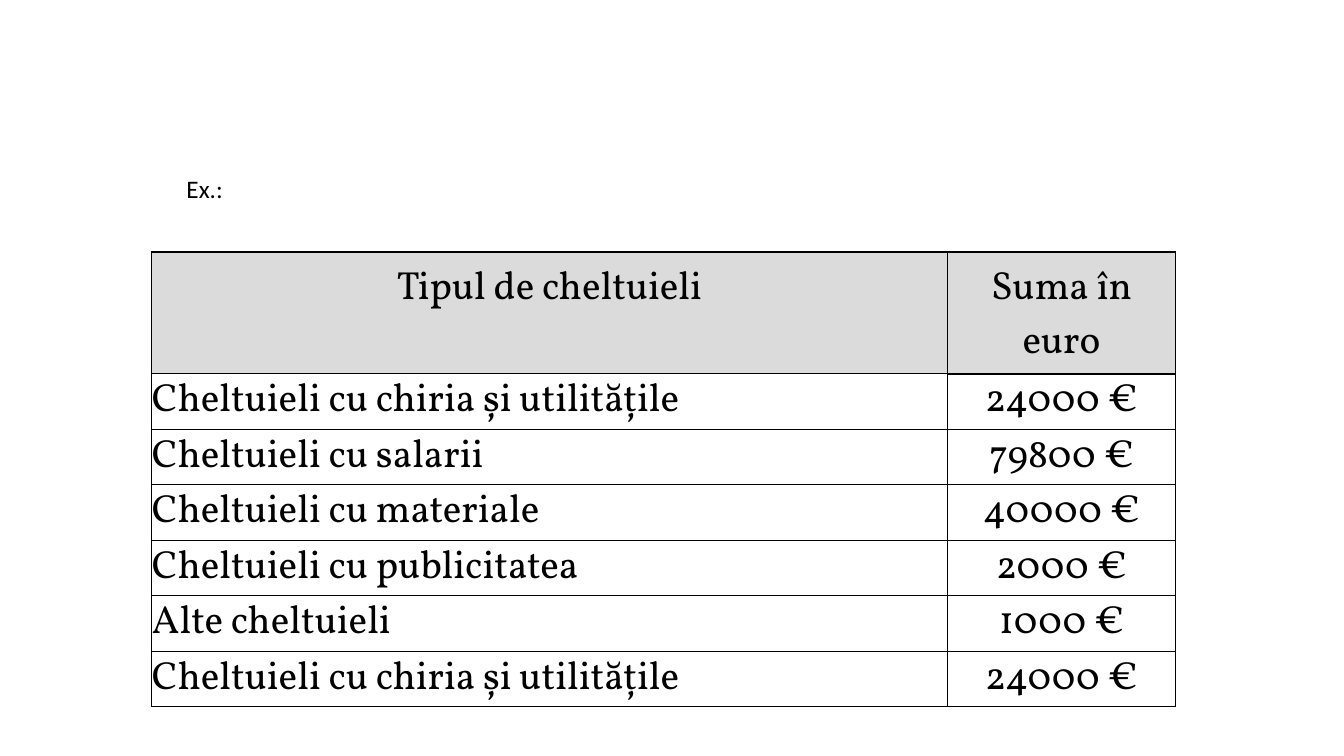
from lxml import etree
from pptx import Presentation
from pptx import util as u
from pptx.dml.color import RGBColor
from pptx.enum import text
from pptx.oxml import ns

HEAD = ("Tipul de cheltuieli", "Suma în euro")
COSTS = [
    ("Cheltuieli cu chiria și utilitățile", 24000),
    ("Cheltuieli cu salarii", 79800),
    ("Cheltuieli cu materiale", 40000),
    ("Cheltuieli cu publicitatea", 2000),
    ("Alte cheltuieli", 1000),
    ("Cheltuieli cu chiria și utilitățile", 24000),
]
LABEL = "Ex.:"
COLORS = {"ink": "000000", "head": "DBDBDB"}
WIDTHS = (20.07, 5.74)
HEAD_H, ROW_H = 3.07, 1.27


def write(para, words, size, font):
    run = para.add_run()
    run.text = words
    run.font.size = u.Pt(size)
    run.font.name = font
    run.font.bold = False
    run.font.color.rgb = RGBColor.from_string(COLORS["ink"])


def border(cell, sides):
    props = cell._tc.get_or_add_tcPr()
    for side, width in sides.items():
        line = etree.SubElement(props, ns.qn("a:ln" + side), w=str(u.Pt(width)))
        fill = etree.SubElement(line, ns.qn("a:solidFill"))
        etree.SubElement(fill, ns.qn("a:srgbClr"), val=COLORS["ink"])


def edges(row, col):
    if row == 0:
        return dict(L=1, R=1, T=1, B=1) if col == 0 else dict(L=1, R=0.5, T=1.5, B=1.5)
    top = (1, 1.5)[col] if row == 1 else 0.5
    left, right = ((0.5, 1.5), (1.5, 0.5))[col]
    return dict(L=left, R=right, T=top, B=0.5)


def main():
    deck = Presentation()
    deck.slide_width, deck.slide_height = u.Cm(33.87), u.Cm(19.05)
    slide = deck.slides.add_slide(deck.slide_layouts[6])

    rows = [HEAD] + [(name, f"{cost} €") for name, cost in COSTS]
    high = HEAD_H + ROW_H * len(COSTS)
    table = slide.shapes.add_table(
        len(rows), len(WIDTHS), u.Cm(3.81), u.Cm(6.35), u.Cm(sum(WIDTHS)), u.Cm(high)
    ).table
    table.first_row = table.horz_banding = False
    for col, width in zip(table.columns, WIDTHS):
        col.width = u.Cm(width)

    for i, row in enumerate(rows):
        table.rows[i].height = u.Cm(ROW_H if i else HEAD_H)
        for j, words in enumerate(row):
            cell = table.cell(i, j)
            cell.margin_left = cell.margin_right = u.Cm(0.02)
            cell.margin_top = u.Cm(0.02 if i else 0.25)
            cell.margin_bottom = 0
            anchor = text.MSO_ANCHOR
            cell.vertical_anchor = anchor.BOTTOM if i else anchor.TOP
            border(cell, edges(i, j))
            if i:
                cell.fill.background()
            else:
                cell.fill.solid()
                cell.fill.fore_color.rgb = RGBColor.from_string(COLORS["head"])
            para = cell.text_frame.paragraphs[0]
            align = text.PP_ALIGN
            para.alignment = align.LEFT if i and j == 0 else align.CENTER
            write(para, words, 28, "Vollkorn")

    box = slide.shapes.add_textbox(u.Cm(4.45), u.Cm(4.24), u.Cm(5.72), u.Cm(1.03))
    box.text_frame.word_wrap = True
    box.text_frame.auto_size = text.MSO_AUTO_SIZE.SHAPE_TO_FIT_TEXT
    write(box.text_frame.paragraphs[0], LABEL, 18, "Calibri")

    deck.save("out.pptx")


if __name__ == "__main__":
    main()
